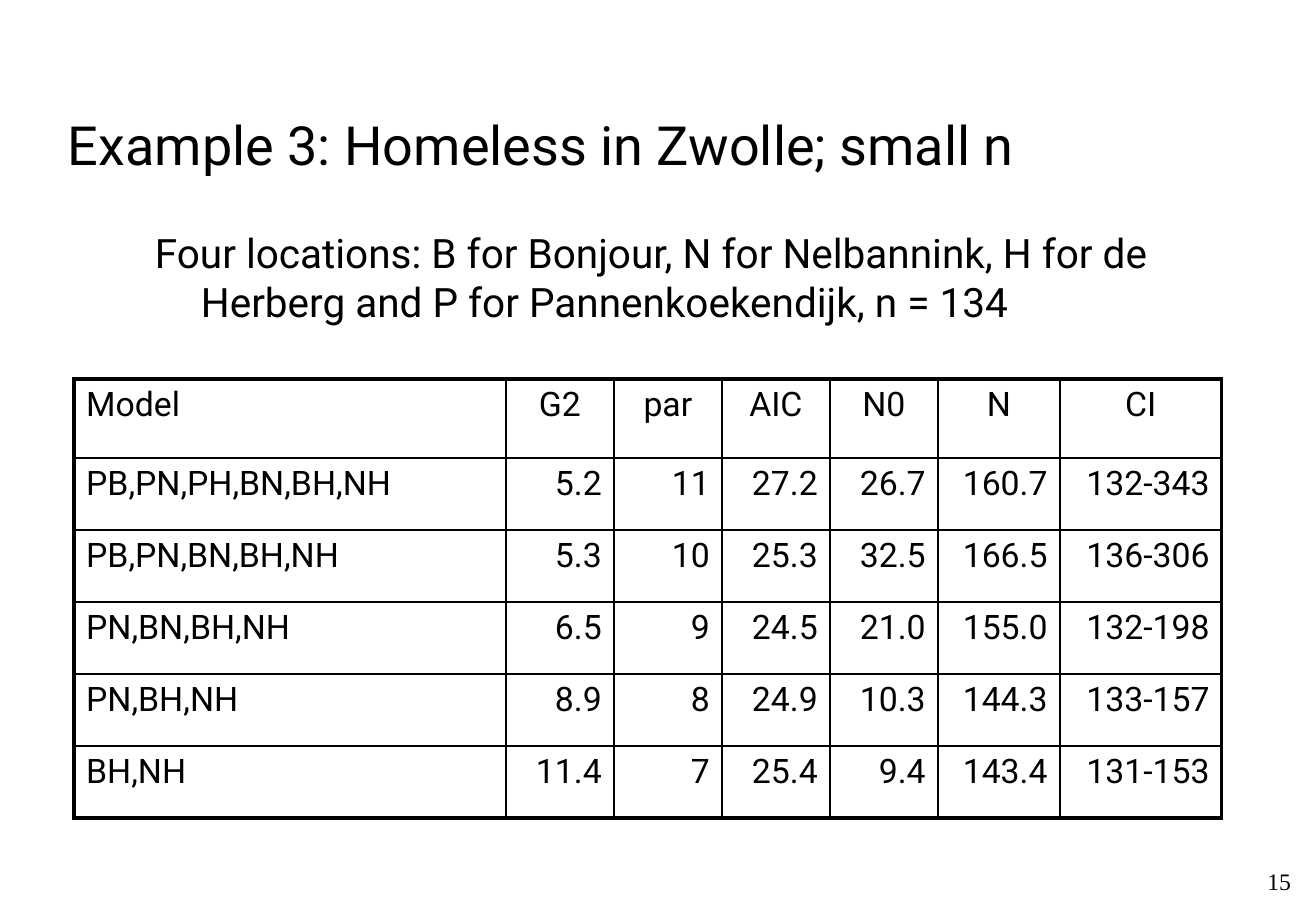
import dataclasses

import pptx
import pptx.dml.color
import pptx.enum.text
import pptx.oxml.ns
import pptx.util
from lxml import etree

EMU_PER_PX = 914400 / 121.5
ALIGN = pptx.enum.text.PP_ALIGN
ANCHOR = pptx.enum.text.MSO_ANCHOR


@dataclasses.dataclass(frozen=True)
class Theme:
    ink: str = "000000"
    sans: str = "Roboto"
    serif: str = "Times New Roman"
    title_size: int = 32
    body_size: int = 24
    table_size: int = 20
    number_size: int = 14
    frame_line: float = 2.25
    grid_line: float = 1


THEME = Theme()

COLUMN_WIDTHS = [432, 108, 108, 108, 108, 122, 162]
ROW_HEIGHTS = [79] + [72] * 5
MODEL_FITS = [
    ["Model", "G2", "par", "AIC", "N0", "N", "CI"],
    ["PB,PN,PH,BN,BH,NH", "5.2", "11", "27.2", "26.7", "160.7", "132-343"],
    ["PB,PN,BN,BH,NH", "5.3", "10", "25.3", "32.5", "166.5", "136-306"],
    ["PN,BN,BH,NH", "6.5", "9", "24.5", "21.0", "155.0", "132-198"],
    ["PN,BH,NH", "8.9", "8", "24.9", "10.3", "144.3", "133-157"],
    ["BH,NH", "11.4", "7", "25.4", "9.4", "143.4", "131-153"],
]


def px(length):
    return pptx.util.Emu(round(length * EMU_PER_PX))


def apply_format(target, values):
    for attribute, value in values.items():
        setattr(target, attribute, value)


def write(paragraph, text, size, font=THEME.sans, align=ALIGN.LEFT):
    paragraph.alignment = align
    run = paragraph.add_run()
    run.text = text
    apply_format(run.font, {"name": font, "size": pptx.util.Pt(size)})
    run.font.color.rgb = pptx.dml.color.RGBColor.from_string(THEME.ink)


def add_text(slide, box, text, size, anchor=ANCHOR.TOP, wrap=True, **style):
    frame = slide.shapes.add_textbox(*map(px, box)).text_frame
    apply_format(frame, {"word_wrap": wrap, "vertical_anchor": anchor})
    paragraph = frame.paragraphs[0]
    write(paragraph, text, size, **style)
    return paragraph


def hang_indent(paragraph, indent):
    properties = paragraph._p.get_or_add_pPr()
    properties.set("marL", str(px(indent)))
    properties.set("indent", str(px(-indent)))


def set_borders(cell, widths):
    """Draw cell edges; widths maps L, R, T and B to points."""
    properties = cell._tc.get_or_add_tcPr()
    for position, (side, width) in enumerate(widths.items()):
        edge = etree.Element(pptx.oxml.ns.qn(f"a:ln{side}"), w=str(pptx.util.Pt(width)))
        fill = etree.SubElement(edge, pptx.oxml.ns.qn("a:solidFill"))
        etree.SubElement(fill, pptx.oxml.ns.qn("a:srgbClr"), val=THEME.ink)
        properties.insert(position, edge)


def add_fit_table(slide, left, top):
    row_count, column_count = len(ROW_HEIGHTS), len(COLUMN_WIDTHS)
    table = slide.shapes.add_table(
        row_count, column_count, px(left), px(top),
        px(sum(COLUMN_WIDTHS)), px(sum(ROW_HEIGHTS))).table
    apply_format(table, {"first_row": False, "horz_banding": False})
    for column, width in zip(table.columns, COLUMN_WIDTHS):
        column.width = px(width)
    for row, height in zip(table.rows, ROW_HEIGHTS):
        row.height = px(height)

    for r, fits in enumerate(MODEL_FITS):
        for c, entry in enumerate(fits):
            cell = table.cell(r, c)
            cell.fill.background()
            if c == 0:
                align = ALIGN.LEFT
            else:
                align = ALIGN.CENTER if r == 0 else ALIGN.RIGHT
            write(cell.text_frame.paragraphs[0], entry, THEME.table_size, align=align)
            on_frame = {"L": c == 0, "R": c == column_count - 1,
                        "T": r == 0, "B": r == row_count - 1}
            set_borders(cell, {side: THEME.frame_line if outer else THEME.grid_line
                               for side, outer in on_frame.items()})


def main():
    deck = pptx.Presentation()
    apply_format(deck, {"slide_width": px(1316), "slide_height": px(911)})
    slide = deck.slides.add_slide(deck.slide_layouts[6])

    add_text(slide, (1237, 861, 66, 40), "15", THEME.number_size,
             anchor=ANCHOR.MIDDLE, wrap=False, font=THEME.serif, align=ALIGN.RIGHT)
    add_text(slide, (56, 40, 1028, 142), "Example 3: Homeless in Zwolle; small n",
             THEME.title_size, anchor=ANCHOR.BOTTOM)
    locations = add_text(
        slide, (143, 222, 1022, 118),
        "Four locations: B for Bonjour, N for Nelbannink, H for de Herberg "
        "and P for Pannenkoekendijk, n = 134", THEME.body_size)
    hang_indent(locations, 46)
    add_fit_table(slide, 74, 379)

    deck.save("out.pptx")


if __name__ == "__main__":
    main()
